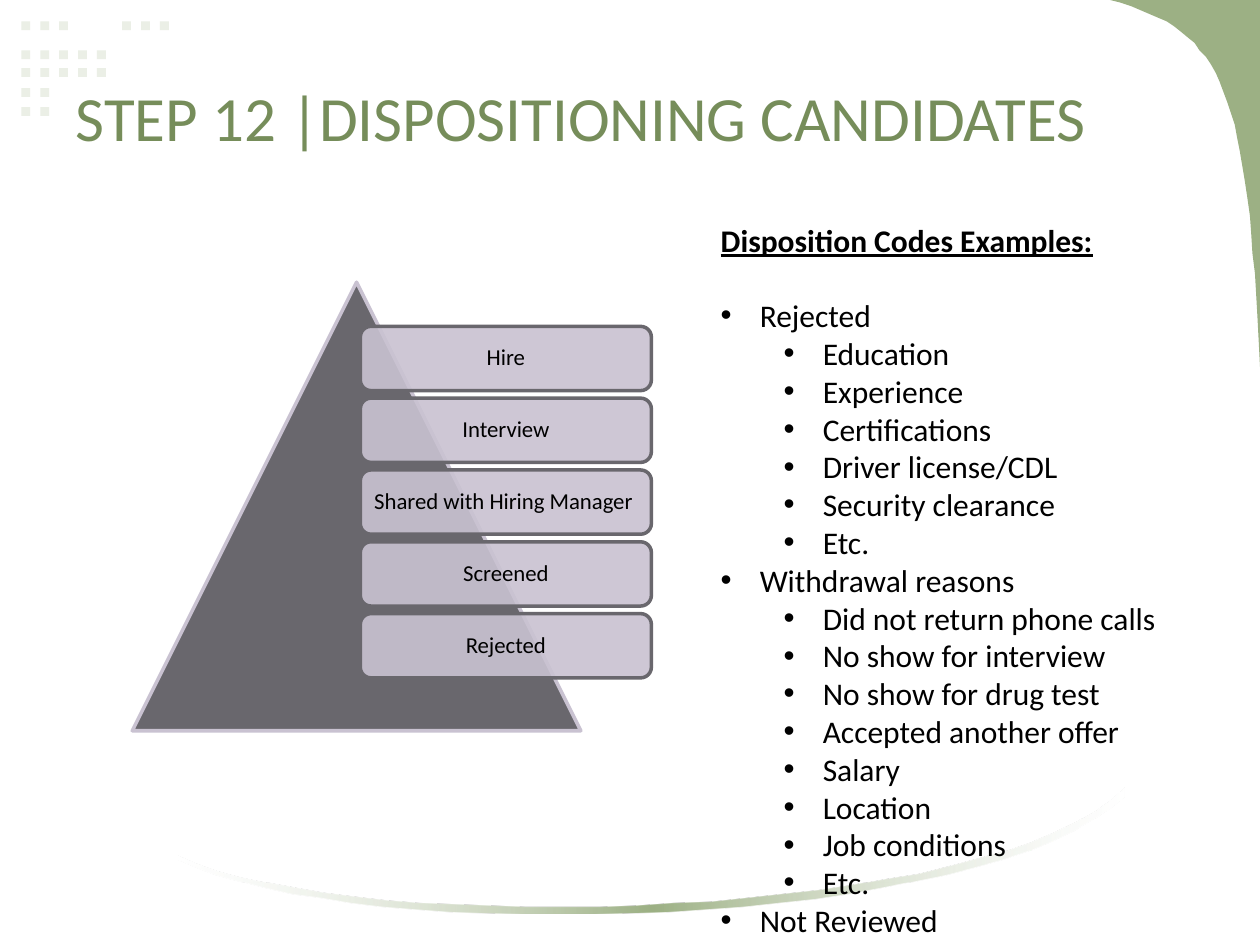
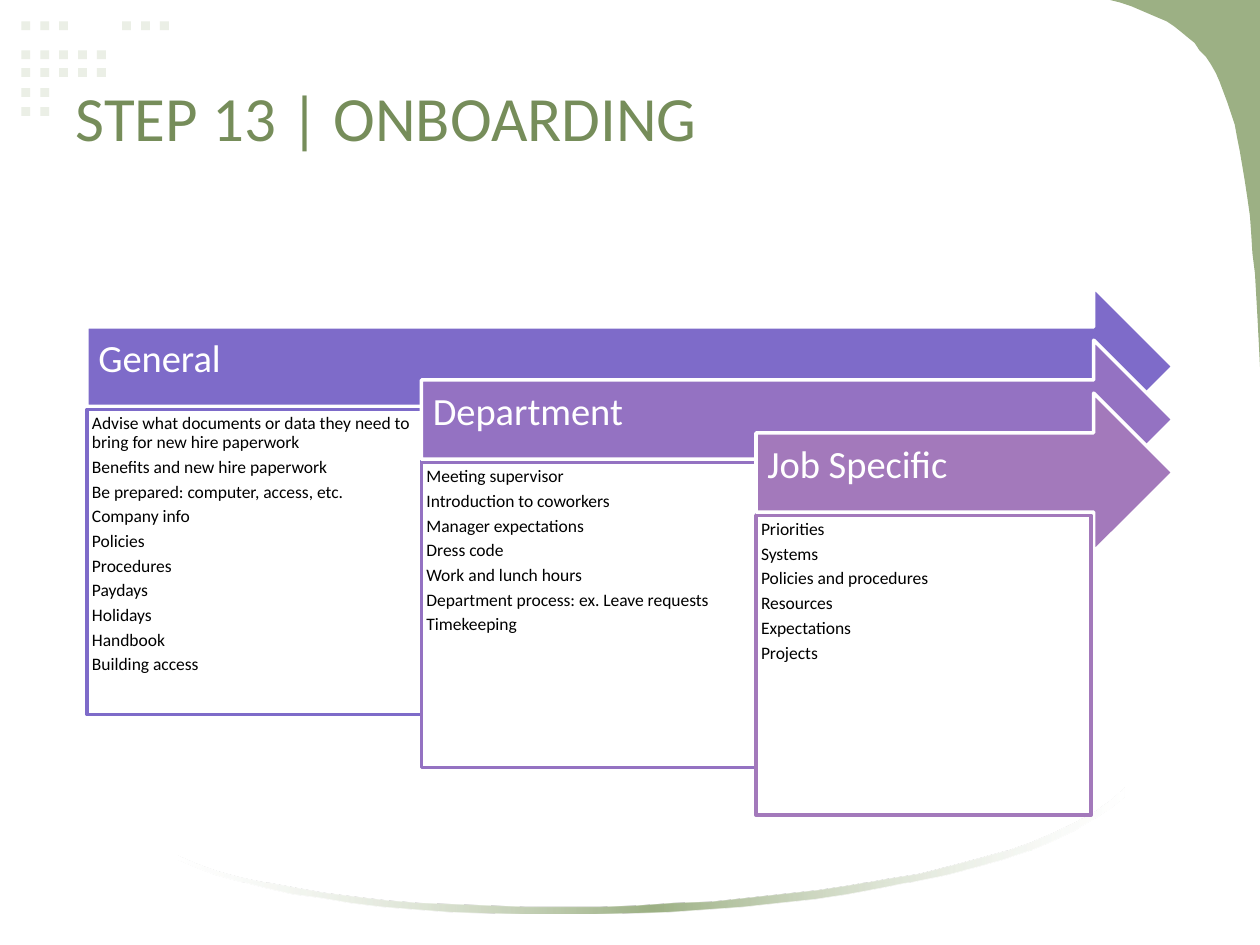
from dataclasses import dataclass
from typing import NamedTuple

from lxml.etree import SubElement
from pptx import Presentation
from pptx.dml.color import RGBColor
from pptx.enum.shapes import MSO_SHAPE as Preset
from pptx.enum.text import MSO_ANCHOR as Anchor, MSO_AUTO_SIZE as AutoSize, PP_ALIGN as Align
from pptx.oxml import parse_xml
from pptx.oxml.ns import nsdecls, qn
from pptx.shapes.autoshape import Shape
from pptx.slide import Slide
from pptx.util import Inches, Pt

Point = tuple[float, float]


@dataclass(frozen=True)
class Theme:
    font: str = "Calibri"
    title: str = "768D5A"
    leaf: str = "9CB084"
    dot: str = "EBEFE6"
    slate: str = "69676D"
    lilac: str = "C9C2D1"
    white: str = "FFFFFF"
    black: str = "000000"
    title_size: int = 36
    arrow_size: int = 22
    list_size: int = 18
    stage_size: int = 13
    detail_size: int = 10
    outline: int = 2


THEME = Theme()


class Box(NamedTuple):
    left: float
    top: float
    width: float
    height: float

    def inches(self) -> list[int]:
        return [Inches(length) for length in self]


class Phase(NamedTuple):
    name: str
    color: str
    panel_height: float
    details: list[str]


class CodeGroup(NamedTuple):
    name: str
    reasons: list[str]


DOT_PITCH = 0.15
DOT_ROWS = [  # top, then (first left, number of dots) for each run
    (0.17, [(0.17, 3), (0.97, 3)]),
    (0.40, [(0.17, 5)]),
    (0.54, [(0.17, 5)]),
    (0.70, [(0.17, 2)]),
    (0.85, [(0.17, 2)]),
]

CORNER: list[Point] = [
    (8.81, 0), (10, 0), (10, 2.91), (9.99, 2.71), (9.98, 2.52), (9.97, 2.34),
    (9.96, 2.17), (9.94, 2.01), (9.93, 1.85), (9.92, 1.71), (9.9, 1.57), (9.88, 1.44),
    (9.86, 1.32), (9.84, 1.2), (9.82, 1.1), (9.8, 0.99), (9.77, 0.9), (9.74, 0.81),
    (9.71, 0.73), (9.68, 0.65), (9.65, 0.58), (9.61, 0.51), (9.57, 0.45), (9.52, 0.4),
    (9.48, 0.34), (9.43, 0.3), (9.37, 0.25), (9.32, 0.21), (9.26, 0.17), (9.19, 0.14),
    (9.12, 0.11), (9.05, 0.08), (8.98, 0.05), (8.89, 0.02),
]

SWOOSH: list[Point] = [
    (8.92, 6.25), (8.92, 6.32), (8.81, 6.41), (8.67, 6.5), (8.52, 6.59), (8.35, 6.67),
    (8.16, 6.75), (7.95, 6.82), (7.73, 6.88), (7.5, 6.94), (7.25, 6.99), (7, 7.04),
    (6.73, 7.09), (6.46, 7.13), (6.17, 7.16), (5.89, 7.19), (5.6, 7.21), (5.31, 7.23),
    (5.01, 7.24), (4.72, 7.25), (4.43, 7.25), (4.14, 7.25), (3.85, 7.24), (3.57, 7.23),
    (3.3, 7.21), (3.04, 7.19), (2.79, 7.16), (2.55, 7.12), (2.32, 7.09), (2.1, 7.04),
    (1.91, 6.99), (1.72, 6.94), (1.56, 6.88), (1.42, 6.82), (1.42, 6.79), (1.56, 6.85),
    (1.73, 6.91), (1.92, 6.96), (2.12, 7), (2.34, 7.04), (2.57, 7.08), (2.81, 7.11),
    (3.07, 7.14), (3.33, 7.16), (3.61, 7.17), (3.89, 7.18), (4.17, 7.19), (4.46, 7.19),
    (4.76, 7.19), (5.05, 7.18), (5.34, 7.16), (5.64, 7.15), (5.93, 7.12), (6.21, 7.09),
    (6.49, 7.06), (6.76, 7.02), (7.03, 6.97), (7.29, 6.93), (7.53, 6.87), (7.76, 6.81),
    (7.98, 6.75), (8.18, 6.68), (8.37, 6.6), (8.54, 6.52), (8.68, 6.44), (8.81, 6.35),
]

STAGES = ["Hire", "Interview", "Shared with Hiring Manager ", "Screened", "Rejected"]

CODE_GROUPS = [
    CodeGroup("Rejected", ["Education", "Experience", "Certifications",
                           "Driver license/CDL", "Security clearance", "Etc."]),
    CodeGroup("Withdrawal reasons", [
        "Did not return phone calls", "No show for interview", "No show for drug test",
        "Accepted another offer", "Salary", "Location", "Job conditions", "Etc."]),
    CodeGroup("Not Reviewed", []),
]

PHASES = [
    Phase("General", "7E6BC9", 2.42, [
        "Advise what documents or data they need to bring for new hire paperwork",
        "Benefits and new hire paperwork", "Be prepared: computer, access, etc.",
        "Company info", "Policies", "Procedures", "Paydays", "Holidays", "Handbook",
        "Building access"]),
    Phase("Department", "9472C2", 2.42, [
        "Meeting supervisor", "Introduction to coworkers", "Manager expectations",
        "Dress code", "Work and lunch hours", "Department process: ex. Leave requests",
        "Timekeeping"]),
    Phase("Job Specific", "A379BB", 2.38, [
        "Priorities", "Systems", "Policies and procedures", "Resources", "Expectations",
        "Projects"]),
]


def set_font(paragraph, size: int, color: str) -> None:
    font = paragraph.font
    font.name, font.size = THEME.font, Pt(size)
    font.color.rgb = RGBColor.from_string(color)


def paint(shape: Shape, fill: str, line: str | None = None) -> None:
    shape.shadow.inherit = False
    shape.fill.solid()
    shape.fill.fore_color.rgb = RGBColor.from_string(fill)
    if line is None:
        shape.line.fill.background()
    else:
        shape.line.color.rgb = RGBColor.from_string(line)
        shape.line.width = Pt(THEME.outline)


def add_preset(slide: Slide, preset: Preset, box: Box, fill: str,
               line: str | None = None) -> Shape:
    shape = slide.shapes.add_shape(preset, *box.inches())
    paint(shape, fill, line)
    return shape


def add_outline(slide: Slide, points: list[Point], fill: str) -> Shape:
    corners = [(Inches(x), Inches(y)) for x, y in points]
    builder = slide.shapes.build_freeform(*corners[0])
    builder.add_line_segments(corners[1:], close=True)
    shape = builder.convert_to_shape()
    paint(shape, fill)
    return shape


def write(shape: Shape, lines: list[str], size: int, color: str, insets: Box,
          anchor: Anchor = Anchor.MIDDLE, align: Align = Align.LEFT) -> None:
    """Fill a shape with tightly set lines; insets run left, top, right, bottom."""
    frame = shape.text_frame
    frame.word_wrap = True
    frame.vertical_anchor = anchor
    (frame.margin_left, frame.margin_top,
     frame.margin_right, frame.margin_bottom) = insets.inches()
    frame.text = "\n".join(lines)
    for paragraph in frame.paragraphs:
        paragraph.alignment = align
        paragraph.line_spacing = 0.9
        if len(lines) > 1:
            paragraph.space_after = Pt(0.33 * size)
        set_font(paragraph, size, color)


def fade_ends(shape: Shape) -> None:
    """Swap the solid fill for one that fades to white at both ends."""
    stops = "".join(
        f'<a:gs pos="{pos}"><a:srgbClr val="{color}"><a:alpha val="{alpha}"/></a:srgbClr></a:gs>'
        for pos, color, alpha in [(0, THEME.white, 30000), (50000, THEME.leaf, 100000),
                                  (100000, THEME.white, 30000)])
    gradient = parse_xml(f'<a:gradFill {nsdecls("a")} rotWithShape="1"><a:gsLst>{stops}'
                         '</a:gsLst><a:lin ang="0" scaled="1"/></a:gradFill>')
    properties = shape.element.spPr
    properties.replace(properties.find(qn("a:solidFill")), gradient)


def set_opacity(shape: Shape, percent: int) -> None:
    color = shape.element.spPr.find(qn("a:solidFill")).find(qn("a:srgbClr"))
    SubElement(color, qn("a:alpha"), val=str(percent * 1000))


def decorate_master(slide: Slide) -> None:
    """Draw the shared ornaments on a slide, then move them to its master."""
    ornaments = [
        add_preset(slide, Preset.RECTANGLE, Box(left + DOT_PITCH * i, top, 0.07, 0.07), THEME.dot)
        for top, runs in DOT_ROWS for left, count in runs for i in range(count)]
    ornaments.append(add_outline(slide, CORNER, THEME.leaf))
    swoosh = add_outline(slide, SWOOSH, THEME.leaf)
    fade_ends(swoosh)
    ornaments.append(swoosh)
    tree = slide.slide_layout.slide_master.shapes.element
    for i, ornament in enumerate(ornaments):
        ornament.element.nvSpPr.cNvPr.set("id", str(100 + i))
        tree.insert(2 + i, ornament.element)


def place(shape: Shape, box: Box) -> None:
    shape.left, shape.top, shape.width, shape.height = box.inches()


def set_title(slide: Slide, text: str) -> None:
    title = slide.shapes.title
    place(title, Box(0.5, 0.3, 9, 1.25))
    title.text_frame.text = text
    title.text_frame.vertical_anchor = Anchor.MIDDLE
    heading = title.text_frame.paragraphs[0]
    heading.alignment = Align.LEFT
    set_font(heading, THEME.title_size, THEME.title)


def format_code(paragraph, level: int, bullet: bool) -> None:
    paragraph.level = level
    properties = paragraph._p.get_or_add_pPr()
    indent = Inches(0.31) if bullet else 0
    properties.set("marL", str(Inches(0.5 * level) + indent))
    properties.set("indent", str(-indent))
    if bullet:
        SubElement(properties, qn("a:buChar"), char="•")
    else:
        SubElement(properties, qn("a:buNone"))
    paragraph.space_before = Pt(0)
    set_font(paragraph, THEME.list_size, THEME.black)


def fill_codes(body: Shape) -> None:
    place(body, Box(5.62, 1.7, 3.88, 6.77))
    frame = body.text_frame
    frame.auto_size = AutoSize.NONE
    heading = frame.paragraphs[0]
    heading.text = "Disposition Codes Examples:"
    format_code(heading, 0, bullet=False)
    heading.font.bold = heading.font.underline = True
    heading.space_after = Pt(21.6)
    for group in CODE_GROUPS:
        for level, text in [(0, group.name), *((1, reason) for reason in group.reasons)]:
            code = frame.add_paragraph()
            code.text = text
            format_code(code, level, bullet=True)


def add_pyramid(slide: Slide) -> None:
    add_preset(slide, Preset.ISOSCELES_TRIANGLE, Box(1.05, 2.24, 3.56, 3.56),
               THEME.slate, THEME.lilac)
    for i, name in enumerate(STAGES):
        stage = add_preset(slide, Preset.ROUNDED_RECTANGLE, Box(2.86, 2.59 + 0.57 * i, 2.31, 0.51),
                           THEME.lilac, THEME.slate)
        set_opacity(stage, 90)
        write(stage, [name], THEME.stage_size, THEME.black, Box(0.05, 0.05, 0.05, 0.05),
              align=Align.CENTER)


def add_phases(slide: Slide) -> None:
    right_end, panel_width = 9.31, 2.66
    for i, phase in enumerate(PHASES):
        left, top = 0.69 + 2.655 * i, 2.28 + 0.42 * i
        arrow = add_preset(slide, Preset.RIGHT_ARROW, Box(left, top, right_end - left, 1.26),
                           phase.color, THEME.white)
        write(arrow, [phase.name], THEME.arrow_size, THEME.white, Box(0.09, 0.09, 0.28, 0.2))
        panel = add_preset(slide, Preset.RECTANGLE,
                           Box(left, top + 0.97, panel_width, phase.panel_height),
                           THEME.white, phase.color)
        write(panel, phase.details, THEME.detail_size, THEME.black,
              Box(0.04, 0.04, 0.04, 0.04), anchor=Anchor.TOP)


def main() -> None:
    deck = Presentation()
    deck.slide_width, deck.slide_height = Inches(10), Inches(7.5)
    title_and_content, title_only = deck.slide_layouts[1], deck.slide_layouts[5]

    dispositioning = deck.slides.add_slide(title_and_content)
    decorate_master(dispositioning)
    set_title(dispositioning, "STEP 12 |DISPOSITIONING CANDIDATES")
    add_pyramid(dispositioning)
    fill_codes(dispositioning.placeholders[1])

    onboarding = deck.slides.add_slide(title_only)
    set_title(onboarding, "STEP 13 | ONBOARDING")
    add_phases(onboarding)

    deck.save("out.pptx")


if __name__ == "__main__":
    main()
